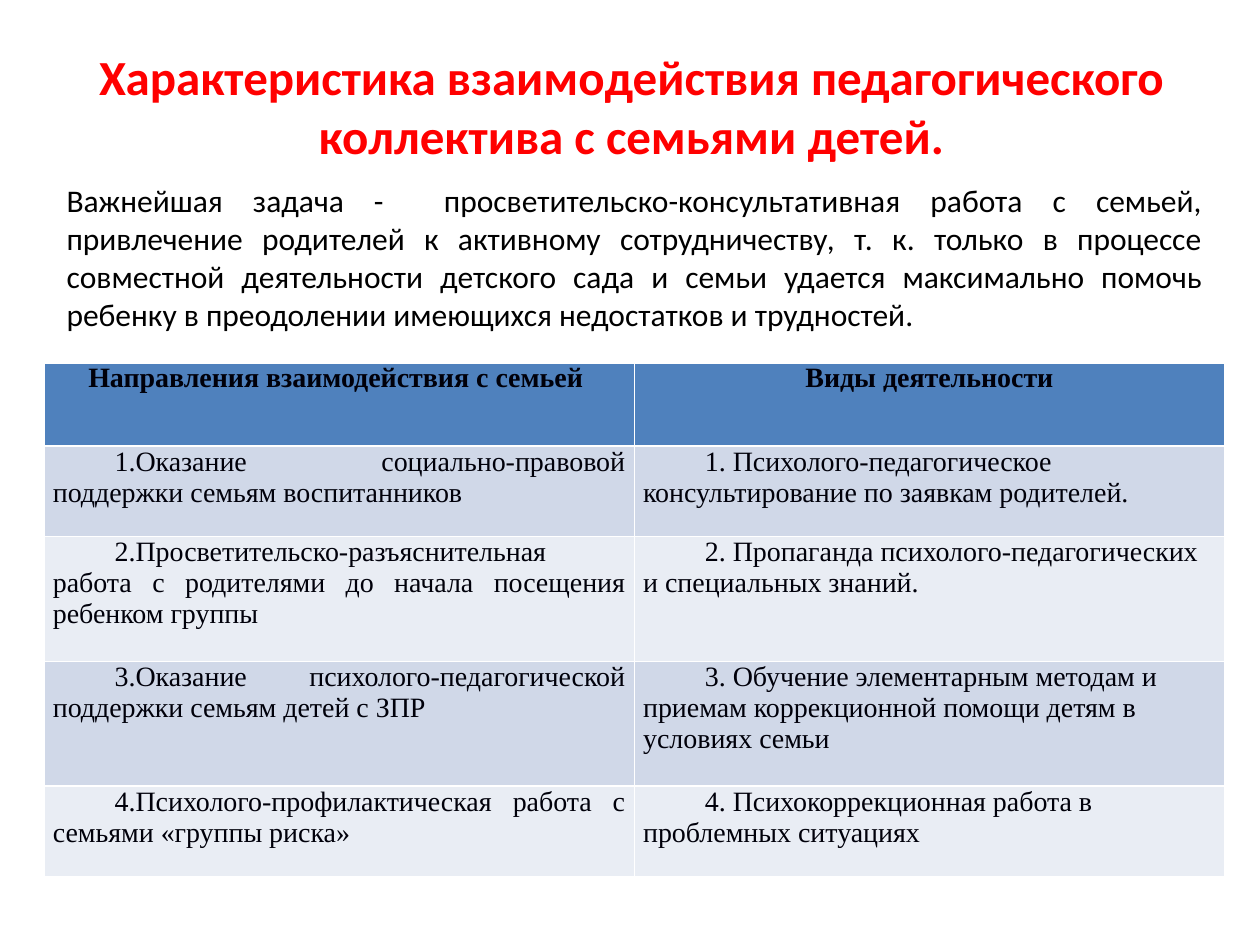
from pptx import Presentation, util as u
from pptx.dml.color import RGBColor
from pptx.enum import text as t

RED = RGBColor(0xFF, 0, 0)
BLACK = RGBColor(0, 0, 0)
INK = RGBColor(0, 0, 0x0A)
HEAD = RGBColor(0x4F, 0x81, 0xBD)
BANDS = [RGBColor(0xD0, 0xD8, 0xE8), RGBColor(0xE9, 0xED, 0xF4)]
MID, LEFT, FULL = t.PP_ALIGN.CENTER, t.PP_ALIGN.LEFT, t.PP_ALIGN.JUSTIFY

# Content
TITLE = "Характеристика взаимодействия педагогического коллектива с семьями детей."
INTRO = (
    "Важнейшая задача -  просветительско-консультативная работа с семьей, "
    "привлечение родителей к активному сотрудничеству, т. к. только в процессе "
    "совместной деятельности детского сада и семьи удается максимально помочь "
    "ребенку в преодолении имеющихся недостатков и трудностей."
)
ROWS = [
    ("Направления взаимодействия с семьей ", "Виды деятельности"),
    ("1.Оказание социально-правовой поддержки семьям воспитанников ",
     "1. Психолого-педагогическое консультирование по заявкам родителей."),
    ("2.Просветительско-разъяснительная работа с родителями до начала "
     "посещения ребенком группы",
     "2. Пропаганда психолого-педагогических и специальных знаний."),
    ("3.Оказание психолого-педагогической поддержки семьям детей с ЗПР ",
     "3. Обучение элементарным методам и приемам коррекционной помощи детям "
     "в условиях семьи"),
    ("4.Психолого-профилактическая работа с семьями «группы риска»",
     "4. Психокоррекционная работа в проблемных ситуациях"),
]
HIGHS = [0.66, 0.72, 0.99, 0.99, 0.72]
WIDE = 4.685

# Text formats
BIG = dict(name="Calibri", size=u.Pt(28), bold=True)
BODY = dict(name="Calibri", size=u.Pt(18), bold=False)
TOP = dict(name="Times New Roman", size=u.Pt(16), bold=True)
ITEM = {**TOP, "bold": False}


def write(para, words, font, color, align):
    run = para.add_run()
    run.text = words
    for key, val in font.items():
        setattr(run.font, key, val)
    run.font.color.rgb = color
    para.alignment = align


def add_text(slide, box, words, font, color, align, anchor):
    frame = slide.shapes.add_textbox(*map(u.Inches, box)).text_frame
    frame.word_wrap = True
    frame.vertical_anchor = anchor
    para = frame.paragraphs[0]
    write(para, words, font, color, align)
    return para


def add_grid(slide):
    grid = slide.shapes.add_table(
        len(ROWS), 2, u.Inches(0.35), u.Inches(2.88),
        u.Inches(2 * WIDE), u.Inches(sum(HIGHS))).table
    for col in grid.columns:
        col.width = u.Inches(WIDE)
    for r, (row, high) in enumerate(zip(ROWS, HIGHS)):
        grid.rows[r].height = u.Inches(high)
        for c, words in enumerate(row):
            cell = grid.cell(r, c)
            cell.margin_left = cell.margin_right = u.Inches(0.07)
            cell.margin_top = cell.margin_bottom = 0
            cell.fill.solid()
            cell.fill.fore_color.rgb = BANDS[(r - 1) % 2] if r else HEAD
            para = cell.text_frame.paragraphs[0]
            if r:
                write(para, words, ITEM, INK, LEFT if c else FULL)
                # First-line indent
                para._p.get_or_add_pPr().set("indent", str(u.Inches(0.49)))
            else:
                write(para, words, TOP, INK, MID)


def main():
    deck = Presentation()
    deck.slide_width, deck.slide_height = u.Inches(10), u.Inches(7.5)
    slide = deck.slides.add_slide(deck.slide_layouts[6])

    # Heading and introduction
    add_text(slide, (0.51, 0.21, 9, 1.25), TITLE, BIG, RED, MID,
             t.MSO_ANCHOR.MIDDLE)
    add_text(slide, (0.43, 1.39, 9.21, 5.75), INTRO, BODY, BLACK, FULL,
             t.MSO_ANCHOR.TOP)

    # Table of directions and activities
    add_grid(slide)
    deck.save("out.pptx")


if __name__ == "__main__":
    main()
